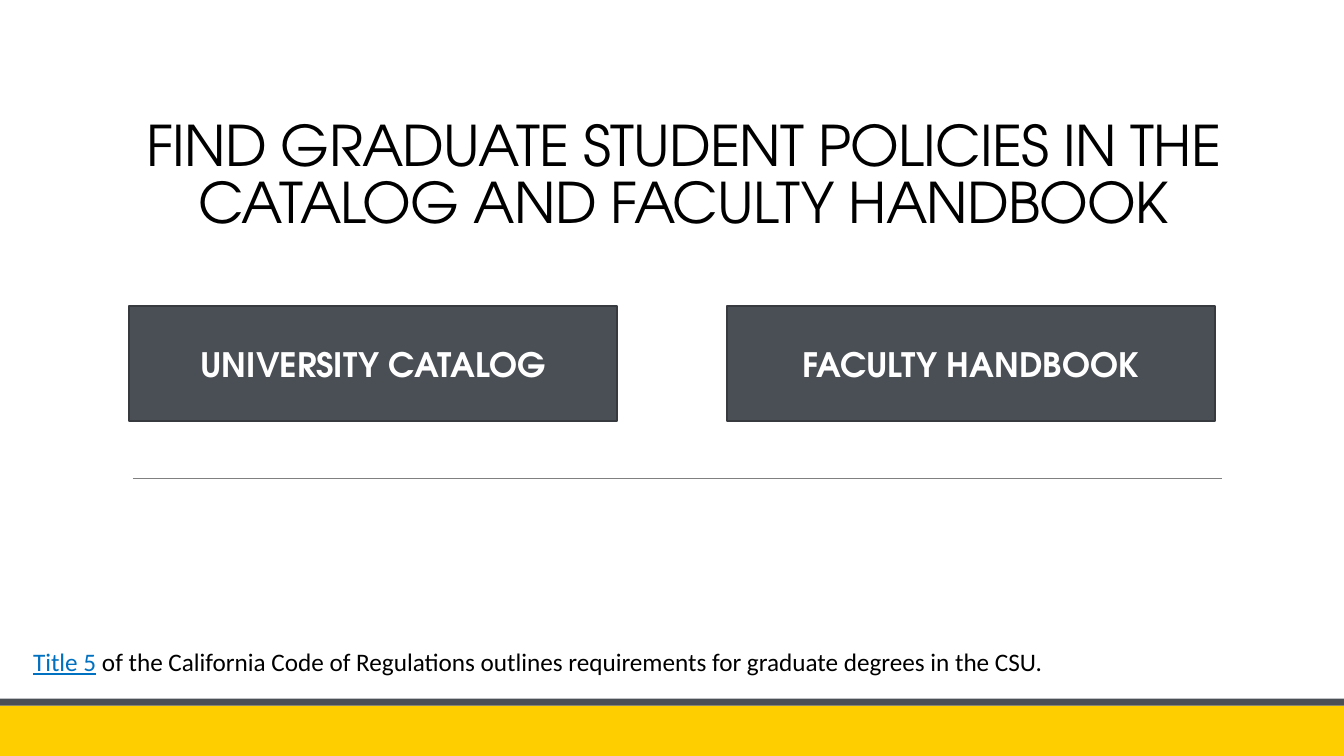
from pptx import Presentation
from pptx.dml.color import RGBColor as Rgb
from pptx.enum.shapes import MSO_CONNECTOR as Link, MSO_SHAPE as Form
from pptx.enum.text import MSO_ANCHOR as Anchor, MSO_AUTO_SIZE as Fit, PP_ALIGN as Align
from pptx.oxml.ns import qn
from pptx.util import Pt
from lxml.etree import SubElement as Sub

HUES = {
    "gold": "FFCE00",
    "slate": "4A4F55",
    "edge": "373A3F",
    "rule": "808080",
    "link": "0070C0",
    "white": "FFFFFF",
    "black": "000000",
}


class Page:
    head = "TeX Gyre Adventor"
    body = "Calibri"

    def __init__(self, deck):
        self.slide = deck.slides.add_slide(deck.slide_layouts[5])
        self.shapes = self.slide.shapes

    def hue(self, name):
        return Rgb.from_string(HUES[name])

    def run(self, para, text, size, font, hue, bold=False, under=False):
        run = para.add_run()
        run.text = text
        run.font.size = Pt(size)
        run.font.name = font
        run.font.bold = bold
        run.font.underline = under
        run.font.color.rgb = self.hue(hue)
        return run

    def rect(self, x, y, w, h, fill, edge=None):
        box = self.shapes.add_shape(Form.RECTANGLE, Pt(x), Pt(y), Pt(w), Pt(h))
        box.shadow.inherit = False
        box.fill.solid()
        box.fill.fore_color.rgb = self.hue(fill)
        if edge:
            box.line.color.rgb = self.hue(edge)
            box.line.width = Pt(1.25)
        else:
            box.line.fill.background()
        return box

    def rule(self, x, y, end):
        line = self.shapes.add_connector(Link.STRAIGHT, Pt(x), Pt(y), Pt(end), Pt(y))
        line.line.color.rgb = self.hue("rule")
        line.line.width = Pt(0.5)
        Sub(line._element.spPr, qn("a:effectLst"))

    def title(self, x, y, w, h, text):
        box = self.shapes.title
        box.left, box.top, box.width, box.height = Pt(x), Pt(y), Pt(w), Pt(h)
        frame = box.text_frame
        frame.auto_size = Fit.NONE
        frame.word_wrap = True
        frame.vertical_anchor = Anchor.BOTTOM
        para = frame.paragraphs[0]
        para.alignment = Align.CENTER
        para.line_spacing = 0.85
        run = self.run(para, text, 40, self.head, "black")
        run.font._element.set("spc", "-50")

    def button(self, x, y, w, h, text):
        frame = self.rect(x, y, w, h, "slate", "edge").text_frame
        frame.word_wrap = True
        frame.vertical_anchor = Anchor.MIDDLE
        para = frame.paragraphs[0]
        para.alignment = Align.CENTER
        self.run(para, text, 24, self.head, "white", bold=True)

    def note(self, x, y, w, h, link, rest):
        frame = self.shapes.add_textbox(Pt(x), Pt(y), Pt(w), Pt(h)).text_frame
        frame.word_wrap = True
        frame.auto_size = Fit.SHAPE_TO_FIT_TEXT
        para = frame.paragraphs[0]
        self.run(para, link, 18, self.body, "link", under=True)
        self.run(para, rest, 18, self.body, "black")


def main():
    deck = Presentation()
    deck.slide_width, deck.slide_height = Pt(960), Pt(540)
    page = Page(deck)

    # Footer bands and divider
    page.rect(0, 504, 960, 36, "gold")
    page.rect(0, 499, 960, 5, "slate")
    page.rule(95, 342, 872.6)

    # Title
    page.title(92.2, 61.2, 792, 110.2,
               "FIND GRADUATE STUDENT POLICIES IN THE CATALOG AND FACULTY HANDBOOK")

    # Buttons
    for i, text in enumerate(("UNIVERSITY CATALOG", "FACULTY HANDBOOK")):
        page.button(92.2 + i * 427, 218.7, 348.7, 82.3, text)

    # Regulation note
    page.note(16.5, 458, 849, 29, "Title 5",
              " of the California Code of Regulations outlines requirements"
              " for graduate degrees in the CSU.")

    deck.save("out.pptx")


if __name__ == "__main__":
    main()
